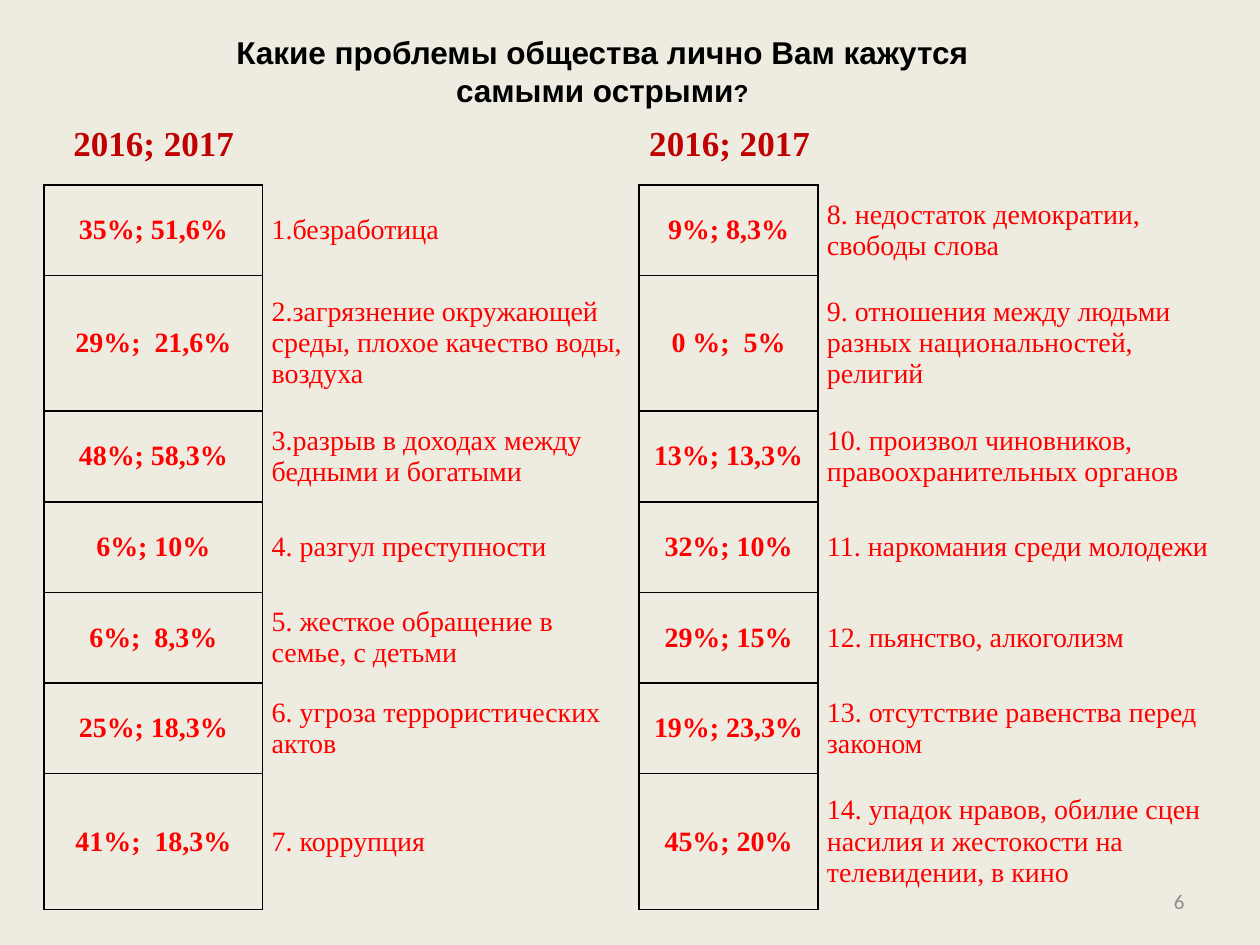
from lxml import etree
from pptx import Presentation
from pptx import util as u
from pptx.dml.color import RGBColor
from pptx.enum import text
from pptx.oxml.ns import qn

COLORS = {"bg": "EEECE1", "black": "000000", "red": "FF0000",
          "dark_red": "C00000", "gray": "8C8C8C"}
ALIGN = text.PP_ALIGN
MIDDLE = text.MSO_ANCHOR.MIDDLE
TITLE = {"size": 18, "name": "Arial", "color": "black", "bold": True}
YEARS = {"size": 20, "name": "Times New Roman", "color": "dark_red", "bold": True}
SHARE = {"size": 16, "name": "Times New Roman", "color": "red", "bold": True}
PROBLEM = {**SHARE, "bold": False}
NUMBER = {"size": 12, "name": "Calibri", "color": "gray", "bold": False}

ROWS = [
    ("35%; 51,6%", "1.безработица",
     "9%; 8,3%", "8. недостаток демократии, свободы слова"),
    ("29%;  21,6%", "2.загрязнение окружающей среды, плохое качество воды, воздуха",
     "0 %;  5%", "9. отношения между людьми разных национальностей, религий"),
    ("48%; 58,3%", "3.разрыв в доходах между бедными и богатыми",
     "13%; 13,3%", "10. произвол чиновников, правоохранительных органов"),
    ("6%; 10%", "4. разгул преступности",
     "32%; 10%", "11. наркомания среди молодежи"),
    ("6%;  8,3%", "5. жесткое обращение в семье, с детьми",
     "29%; 15%", "12. пьянство, алкоголизм"),
    ("25%; 18,3%", "6. угроза террористических актов",
     "19%; 23,3%", "13. отсутствие равенства перед законом"),
    ("41%;  18,3%", "7. коррупция",
     "45%; 20%", "14. упадок нравов, обилие сцен насилия и жестокости на телевидении, в кино"),
]


class Deck:
    def __init__(self, width, height):
        self.prs = Presentation()
        self.prs.slide_width, self.prs.slide_height = u.Pt(width), u.Pt(height)
        self.s = self.prs.slides.add_slide(self.prs.slide_layouts[5])
        fill = self.s.background.fill
        fill.solid()
        fill.fore_color.rgb = RGBColor.from_string(COLORS["bg"])

    def add_runs(self, tf, runs, align):
        p = tf.paragraphs[0]
        p.alignment = align
        for words, style in runs:
            r = p.add_run()
            r.text = words
            for key, value in style.items():
                if key == "color":
                    r.font.color.rgb = RGBColor.from_string(COLORS[value])
                else:
                    setattr(r.font, key, u.Pt(value) if key == "size" else value)

    def title(self, box, runs):
        sp = self.s.shapes.title
        for key, value in zip(("left", "top", "width", "height"), box):
            setattr(sp, key, u.Pt(value))
        sp.text_frame.vertical_anchor = MIDDLE
        sp.text_frame.auto_size = text.MSO_AUTO_SIZE.NONE
        self.add_runs(sp.text_frame, runs, ALIGN.CENTER)

    def textbox(self, box, words, style, align):
        tf = self.s.shapes.add_textbox(*map(u.Pt, box)).text_frame
        tf.word_wrap = True
        tf.vertical_anchor = MIDDLE
        self.add_runs(tf, [(words, style)], align)

    def borders(self, cell, sides):
        tc_pr = cell._tc.get_or_add_tcPr()
        for side in "LRTB":
            ln = etree.SubElement(tc_pr, qn(f"a:ln{side}"), w=str(u.Pt(1)))
            if side in sides:
                solid = etree.SubElement(ln, qn("a:solidFill"))
                etree.SubElement(solid, qn("a:srgbClr"), val=COLORS["black"])
            else:
                etree.SubElement(ln, qn("a:noFill"))

    def table(self, left, top, widths, heights, rows, formats):
        size = (left, top, sum(widths), sum(heights))
        table = self.s.shapes.add_table(len(heights), len(widths), *map(u.Pt, size)).table
        table.first_row = table.horz_banding = False
        for col, width in zip(table.columns, widths):
            col.width = u.Pt(width)
        for row, height, words in zip(table.rows, heights, rows):
            row.height = u.Pt(height)
            for cell, value, (style, align, anchor, sides) in zip(row.cells, words, formats):
                cell.margin_left = cell.margin_right = u.Pt(5.2)
                cell.margin_top = cell.margin_bottom = 0
                cell.vertical_anchor = anchor
                self.borders(cell, sides)
                cell.fill.background()
                self.add_runs(cell.text_frame, [(value, style)], align)


def main():
    deck = Deck(720, 540)
    deck.title((127.5, 15, 433.5, 51),
               [("Какие проблемы общества лично Вам кажутся самыми острыми", TITLE),
                ("?", {**TITLE, "size": 14})])
    deck.textbox((516, 500.5, 168, 28.8), "6", NUMBER, ALIGN.RIGHT)

    share = (SHARE, ALIGN.CENTER, MIDDLE, "LRTB")
    deck.table(25.2, 105.6, [124.9, 215.2, 102.1, 232.6],
               [77.6 if i in (1, 6) else 51.8 for i in range(len(ROWS))], ROWS,
               [share, (PROBLEM, ALIGN.LEFT, MIDDLE, "LR"),
                share, (PROBLEM, ALIGN.LEFT, MIDDLE, "L")])
    for left in (36.7, 365.8):
        deck.table(left, 71.3, [126.7], [29.5], [("2016; 2017",)],
                   [(YEARS, ALIGN.JUSTIFY, text.MSO_ANCHOR.TOP, "")])
    deck.prs.save("out.pptx")


if __name__ == "__main__":
    main()
